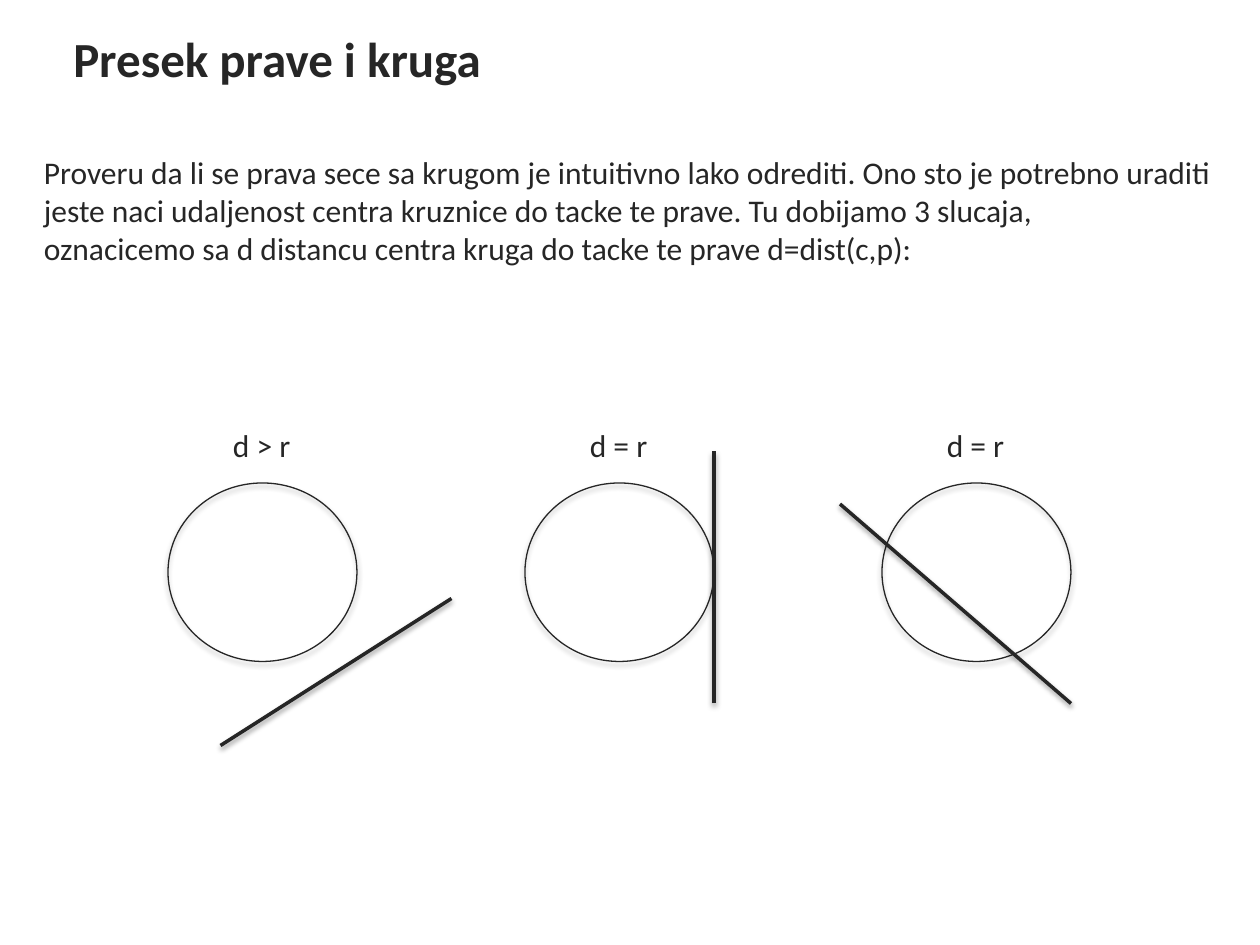
from dataclasses import dataclass

from lxml.etree import SubElement
from pptx import Presentation
from pptx.dml.color import RGBColor
from pptx.enum.shapes import MSO_CONNECTOR as Connector, MSO_SHAPE as Shape
from pptx.enum.text import MSO_ANCHOR as Anchor, MSO_AUTO_SIZE as AutoSize
from pptx.oxml.ns import qn
from pptx.util import Inches, Pt


@dataclass(frozen=True)
class Theme:
    font: str = "Calibri"
    ink: RGBColor = RGBColor(0x26, 0x26, 0x26)
    title_size: float = 28
    body_size: float = 18
    outline: float = 0.75
    stroke: float = 2


THEME = Theme()
COLUMNS, ROWS = 120, 90  # twelve grid units to the inch
CASE_STEP = 34  # columns from one case to the next

# Label, label width, line start and line end, measured from the case's left edge
CASES = [
    ("d > r", 8.3, (5, 71), (27, 57)),
    ("d = r", 7.9, (18, 67), (18, 43)),
    ("d = r", 7.9, (18, 67), (-4, 48)),
]
BODY = [
    "Proveru da li se prava sece sa krugom je intuitivno lako odrediti. "
    "Ono sto je potrebno uraditi jeste naci udaljenost centra kruznice do "
    "tacke te prave. Tu dobijamo 3 slucaja,",
    "oznacicemo sa d distancu centra kruga do tacke te prave d=dist(c,p):",
]


def grid(*units):
    return [Inches(unit / 12) for unit in units]


def apply_format(target, values):
    for name, value in values.items():
        setattr(target, name, value)


def add_text(slide, box, lines, size=THEME.body_size, bold=False, **frame_format):
    frame = slide.shapes.add_textbox(*grid(*box)).text_frame
    apply_format(frame, {"word_wrap": True, **frame_format})
    frame.text = "\n".join(lines)
    for paragraph in frame.paragraphs:
        apply_format(paragraph.font, {"name": THEME.font, "size": Pt(size), "bold": bold})
        paragraph.font.color.rgb = THEME.ink


def style_line(shape, width):
    shape.line.color.rgb = THEME.ink
    shape.line.width = Pt(width)


def add_shadow(shape, distance, opacity):
    """Give the shape a soft black shadow that falls straight down."""
    properties = shape._element.spPr
    for old_effects in properties.findall(qn("a:effectLst")):
        properties.remove(old_effects)
    effects = SubElement(properties, qn("a:effectLst"))
    shadow = SubElement(effects, qn("a:outerShdw"), blurRad=str(Pt(3.1)),
                        dist=str(Pt(distance)), dir="5400000", rotWithShape="0")
    color = SubElement(shadow, qn("a:srgbClr"), val="000000")
    SubElement(color, qn("a:alpha"), val=str(opacity * 1000))


def add_circle(slide, box):
    circle = slide.shapes.add_shape(Shape.OVAL, *grid(*box))
    circle.fill.background()
    style_line(circle, THEME.outline)
    add_shadow(circle, distance=1.8, opacity=35)


def add_straight_line(slide, start, end):
    line = slide.shapes.add_connector(Connector.STRAIGHT, *grid(*start, *end))
    style_line(line, THEME.stroke)
    add_shadow(line, distance=1.6, opacity=38)


def add_case(slide, left, label, label_width, start, end):
    add_circle(slide, (left, 46, 18, 17))
    add_straight_line(slide, (left + start[0], start[1]), (left + end[0], end[1]))
    add_text(slide, (left + 5, 40, label_width, 4.8), [label],
             word_wrap=False, auto_size=AutoSize.SHAPE_TO_FIT_TEXT)


def main():
    presentation = Presentation()
    presentation.slide_width, presentation.slide_height = grid(COLUMNS, ROWS)
    slide = presentation.slides.add_slide(presentation.slide_layouts[6])

    # Title and introduction
    add_text(slide, (5.8, 1, 110.2, 9), ["Presek prave i kruga"],
             size=THEME.title_size, bold=True, vertical_anchor=Anchor.MIDDLE)
    add_text(slide, (3, 14, COLUMNS - 6, 12.1), BODY,
             auto_size=AutoSize.SHAPE_TO_FIT_TEXT)

    # Three positions of a line and a circle
    for index, case in enumerate(CASES):
        add_case(slide, 16 + index * CASE_STEP, *case)

    presentation.save("out.pptx")


if __name__ == "__main__":
    main()
